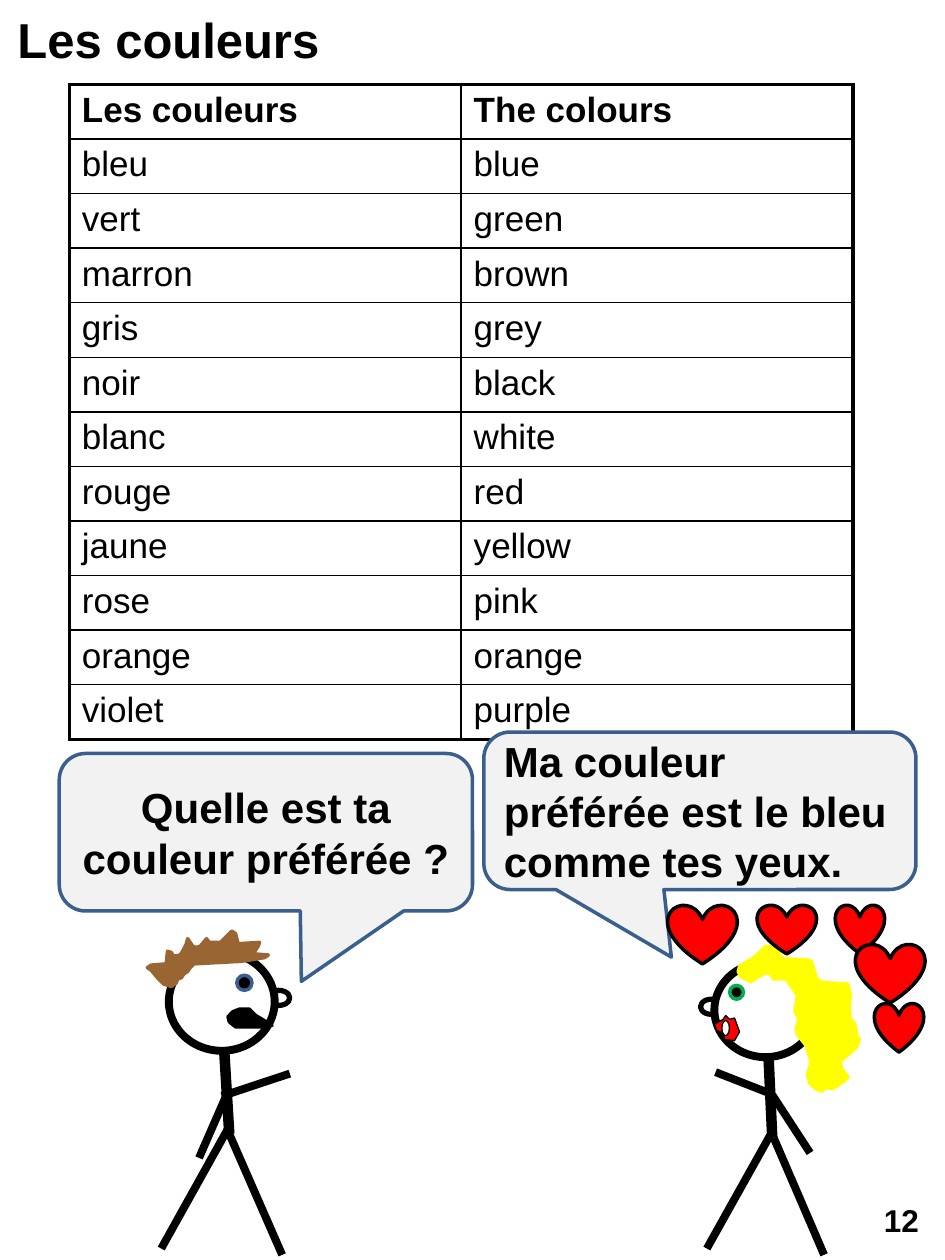
from lxml import etree
from pptx import Presentation
from pptx import util as u
from pptx.dml.color import RGBColor
from pptx.enum import shapes, text
from pptx.oxml import ns

Pt = u.Pt
FONT = "Arial"
COLOURS = {
    "black": "000000", "white": "FFFFFF", "bubble": "F2F2F2", "blue": "3A5F8C",
    "green": "00B050", "brown": "996633", "red": "FF0000", "yellow": "FFFF00",
}
WORDS = [
    ("Les couleurs", "The colours"), ("bleu", "blue"), ("vert", "green"),
    ("marron", "brown"), ("gris", "grey"), ("noir", "black"),
    ("blanc", "white"), ("rouge", "red"), ("jaune", "yellow"),
    ("rose", "pink"), ("orange", "orange"), ("violet", "purple"),
]
BOY = {
    "ear": (68.4, 33.84, 12.96, 8.64),
    "head": (12.24, 12.24, 60.48, 56.16),
    "limbs": [
        ((43.9, 68.4), (46.8, 115.9), 6), ((46.8, 111.6), (7.9, 181.4), 4.5),
        ((46.8, 115.9), (77, 185), 4.5), ((42.5, 94.3), (81.4, 81.4), 4.5),
        ((46.8, 90), (29.5, 129.6), 4.5),
    ],
    "eye": (51.1, 25.2, 8.64, 8.64), "iris": "blue",
    "mouth": [
        (96, 74), (99, 75), (91, 70), (86, 67), (81, 62), (78, 62), (73, 62),
        (68, 64), (66, 66), (64, 68), (65, 72), (70, 76), (92, 76),
    ],
    "lips": ("black", 2), "tooth": None, "hair_colour": "brown",
    "hair": [
        (19, 44), (13, 42), (8, 37), (3, 31), (0, 29), (3, 27), (15, 26),
        (16, 16), (19, 17), (21, 20), (26, 19), (28, 16), (31, 10), (32, 6),
        (36, 12), (39, 13), (42, 12), (47, 6), (49, 9), (58, 9), (64, 3),
        (67, 0), (70, 2), (72, 10), (89, 9), (88, 12), (84, 18), (96, 19),
        (93, 21), (81, 23), (74, 24), (37, 26), (34, 29), (32, 32), (29, 34),
        (27, 37), (24, 38), (23, 41),
    ],
}
GIRL = {
    "ear": (0, 31.7, 12.24, 8.64),
    "head": (7.9, 10.8, 58.32, 54),
    "limbs": [
        ((38.9, 65.5), (41, 110.9), 6), ((41, 107.3), (3.6, 174.2), 4.5),
        ((41.8, 110.9), (70.6, 177.8), 4.5), ((41.8, 86.4), (8.6, 73.4), 4.5),
        ((41, 86.4), (62.6, 119.5), 4.5),
    ],
    "eye": (16.6, 23.8, 7.92, 7.92), "iris": "green",
    "mouth": [
        (11, 64), (18, 60), (20, 57), (23, 60), (27, 59), (31, 70), (27, 77),
        (19, 76), (18, 71), (13, 69),
    ],
    "lips": ("red", 0.75), "tooth": (12.2, 43.9, 4.32, 8.64),
    "hair_colour": "yellow",
    "hair": [
        (34, 19), (41, 12), (45, 9), (52, 2), (58, 3), (61, 4), (63, 9),
        (64, 12), (85, 13), (88, 14), (92, 27), (95, 30), (99, 31), (117, 32),
        (119, 41), (118, 49), (119, 60), (122, 63), (123, 66), (124, 73),
        (126, 76), (124, 82), (117, 88), (111, 93), (112, 100), (115, 103),
        (117, 106), (114, 109), (111, 111), (105, 115), (100, 114), (96, 117),
        (90, 114), (87, 111), (85, 104), (87, 97), (88, 94), (84, 81),
        (77, 72), (76, 68), (78, 60), (77, 57), (75, 54), (77, 41), (73, 35),
        (68, 28), (58, 28), (56, 24), (52, 23), (46, 26), (40, 30), (32, 26),
        (30, 22), (31, 18), (39, 13),
    ],
}


def colour(name):
    return RGBColor.from_string(COLOURS[name])


def paint(shape, fill=None, line=None, width=2):
    shape.shadow.inherit = False
    if fill:
        shape.fill.solid()
        shape.fill.fore_color.rgb = colour(fill)
    else:
        shape.fill.background()
    if line:
        shape.line.color.rgb = colour(line)
        shape.line.width = Pt(width)
    else:
        shape.line.fill.background()


def add_preset(parent, kind, box, fill=None, line=None, width=2):
    shape = parent.add_shape(kind, *map(Pt, box))
    paint(shape, fill, line, width)
    return shape


def write(frame, words, size, bold=True, align=text.PP_ALIGN.LEFT):
    frame.word_wrap = True
    paragraph = frame.paragraphs[0]
    paragraph.alignment = align
    run = paragraph.add_run()
    run.text = words
    run.font.name = FONT
    run.font.size = Pt(size)
    run.font.bold = bold
    run.font.color.rgb = colour("black")


def add_title(slide, box, words):
    title = slide.shapes.add_textbox(*map(Pt, box))
    write(title.text_frame, words, 28)


def set_borders(cell, widths):
    properties = cell._tc.get_or_add_tcPr()
    for index, (side, width) in enumerate(widths.items()):
        line = etree.Element(ns.qn("a:" + side), w=str(Pt(width)))
        fill = etree.SubElement(line, ns.qn("a:solidFill"))
        etree.SubElement(fill, ns.qn("a:srgbClr"), val=COLOURS["black"])
        properties.insert(index, line)


def add_vocabulary(slide, box, rows):
    table = slide.shapes.add_table(len(rows), 2, *map(Pt, box)).table
    table.first_row = table.horz_banding = False
    last = len(rows) - 1
    for row, pair in enumerate(rows):
        table.rows[row].height = Pt(box[3] / len(rows))
        for column, word in enumerate(pair):
            cell = table.cell(row, column)
            cell.fill.background()
            write(cell.text_frame, word, 20, bold=row == 0)
            outer = {"lnL": column == 0, "lnR": column == 1,
                     "lnT": row == 0, "lnB": row == last}
            set_borders(cell, {side: 2.25 if edge else 1 for side, edge in outer.items()})


def add_bubble(slide, box, tail, words, align):
    bubble = add_preset(slide.shapes, shapes.MSO_SHAPE.ROUNDED_RECTANGULAR_CALLOUT,
                        box, "bubble", "blue")
    for index, value in enumerate((*tail, 0.167)):
        bubble.adjustments[index] = value
    bubble.text_frame.vertical_anchor = text.MSO_ANCHOR.MIDDLE
    write(bubble.text_frame, words, 24, align=align)


def add_person(slide, left, top, person):
    parts = slide.shapes.add_group_shape().shapes

    def oval(box, *style):
        x, y, width, height = box
        add_preset(parts, shapes.MSO_SHAPE.OVAL, (left + x, top + y, width, height), *style)

    def outline(points, *style):
        builder = parts.build_freeform(*points[0], scale=Pt(0.72))
        builder.add_line_segments(points[1:])
        paint(builder.convert_to_shape(Pt(left), Pt(top)), *style)

    oval(person["ear"], None, "black", 3)
    oval(person["head"], "white", "black", 4.5)
    for start, end, width in person["limbs"]:
        limb = parts.add_connector(
            shapes.MSO_CONNECTOR.STRAIGHT, Pt(left + start[0]), Pt(top + start[1]),
            Pt(left + end[0]), Pt(top + end[1]))
        limb.line.color.rgb = colour("black")
        limb.line.width = Pt(width)
        etree.SubElement(limb._element.spPr, ns.qn("a:effectLst"))
    oval(person["eye"], "black", person["iris"])
    lips, width = person["lips"]
    outline(person["mouth"], lips, "black", width)
    if person["tooth"]:
        oval(person["tooth"], "white", "black", 0.75)
    outline(person["hair"], person["hair_colour"], person["hair_colour"])


def add_hearts(slide, left, top):
    small, large = (28.08, 28.08), (39.6, 33.84)
    hearts = [(95.76, 0, *small), (107.28, 22.32, *large), (51.12, 0, 33.84, 28.08),
              (0, 0, *large), (118.08, 56.16, *small)]
    for x, y, width, height in hearts:
        add_preset(slide.shapes, shapes.MSO_SHAPE.HEART,
                   (left + x, top + y, width, height), "red", "black")


def add_page_number(slide, box, number):
    badge = add_preset(slide.shapes, shapes.MSO_SHAPE.ROUNDED_RECTANGLE, box)
    badge.text_frame.vertical_anchor = text.MSO_ANCHOR.MIDDLE
    write(badge.text_frame, number, 18, align=text.PP_ALIGN.CENTER)


def main():
    presentation = Presentation()
    presentation.slide_width, presentation.slide_height = Pt(540), Pt(720)
    slide = presentation.slides.add_slide(presentation.slide_layouts[6])
    add_vocabulary(slide, (39.6, 48.24, 447.84, 374.4), WORDS)
    add_person(slide, 84.24, 532.08, BOY)
    add_person(slide, 400.32, 539.28, GIRL)
    add_bubble(slide, (33.84, 430.56, 236.16, 90), (0.086, 0.947),
               "Quelle est ta couleur préférée ?", text.PP_ALIGN.CENTER)
    add_bubble(slide, (276.48, 418.32, 246.96, 90), (-0.066, 0.929),
               "Ma couleur préférée est le bleu comme tes yeux.", text.PP_ALIGN.LEFT)
    add_hearts(slide, 381.6, 516.96)
    add_title(slide, (2.88, 2.16, 534, 41.04), "Les couleurs")
    add_page_number(slide, (495.36, 680.4, 39.6, 33.84), "12")
    presentation.save("out.pptx")


if __name__ == "__main__":
    main()
